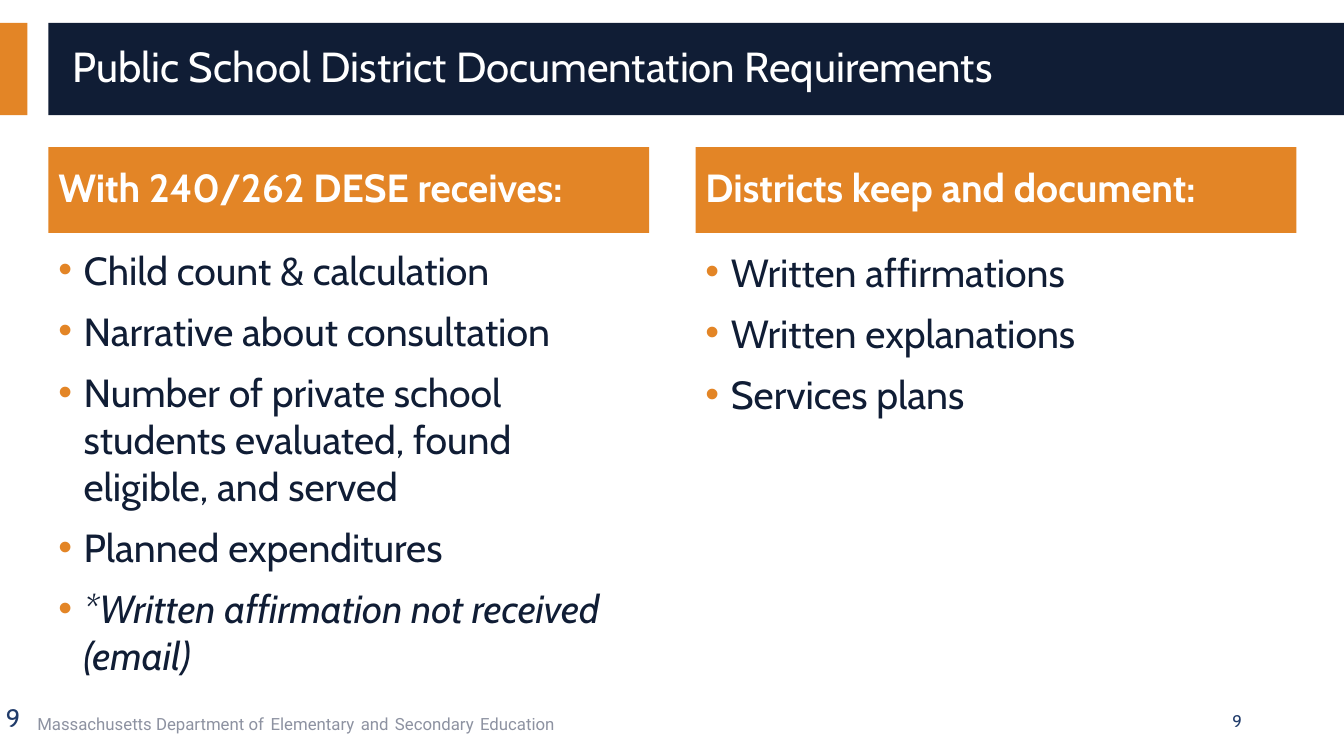
from dataclasses import dataclass

from lxml import etree
from pptx import Presentation
from pptx.dml.color import RGBColor
from pptx.enum.shapes import MSO_SHAPE
from pptx.enum.text import MSO_ANCHOR, MSO_AUTO_SIZE, PP_ALIGN
from pptx.oxml.ns import qn
from pptx.util import Cm, Pt

RECT = MSO_SHAPE.RECTANGLE
TOP, MIDDLE = MSO_ANCHOR.TOP, MSO_ANCHOR.MIDDLE
LEFT, RIGHT = PP_ALIGN.LEFT, PP_ALIGN.RIGHT
NO_FIT = MSO_AUTO_SIZE.NONE


@dataclass(frozen=True)
class Theme:
    navy: str = "101D35"
    orange: str = "E38526"
    white: str = "FFFFFF"
    blue: str = "203B6A"
    grey: str = "8D92A1"
    font: str = "Cabin"
    foot: str = "Roboto"
    title: int = 30
    body: int = 28
    large: int = 18
    small: int = 12
    gap: int = 10


THEME = Theme()
WIDTH, HEIGHT = 33.87, 19.05
MARGIN = 1.22
COLUMN = 15.14
PITCH = 16.31
HEAD = 2.16
INDENT = 0.64

TITLE = "Public School District Documentation Requirements"
LISTS = [
    ("With 240/262 DESE receives:", 0.2, [
        "Child count & calculation",
        "Narrative about consultation",
        "Number of private school students evaluated, found eligible, and served",
        "Planned expenditures",
        "*Written affirmation not received (email)",
    ]),
    ("Districts keep and document:", 0.25, [
        "Written affirmations",
        "Written explanations",
        "Services plans",
    ]),
]
FOOTER = ["Massachusetts Department of", "Elementary", "and", "Secondary", "Education"]
NUMBER = "9"


def style(run, size, color, face=THEME.font, bold=False):
    font = run.font
    font.name, font.size, font.bold = face, Pt(size), bold
    font.color.rgb = RGBColor.from_string(color)


def set_frame(shape, anchor=TOP):
    frame = shape.text_frame
    frame.word_wrap = True
    frame.auto_size = NO_FIT
    frame.vertical_anchor = anchor
    return frame


def add_bar(slide, box, color):
    bar = slide.shapes.add_shape(RECT, *map(Cm, box))
    bar.shadow.inherit = False
    bar.fill.solid()
    bar.fill.fore_color.rgb = RGBColor.from_string(color)
    bar.line.fill.background()
    return bar


def add_text(slide, box, anchor=TOP):
    return set_frame(slide.shapes.add_textbox(*map(Cm, box)), anchor)


def add_line(frame, text, size, color, align=LEFT, bold=False):
    para = frame.paragraphs[0]
    para.text = text
    para.alignment = align
    style(para.runs[0], size, color, bold=bold)
    return para


def add_bullet(para):
    props = para._p.get_or_add_pPr()
    props.set("marL", str(Cm(INDENT)))
    props.set("indent", str(-Cm(INDENT)))
    tint = etree.SubElement(props, qn("a:buClr"))
    etree.SubElement(tint, qn("a:srgbClr"), val=THEME.orange)
    etree.SubElement(props, qn("a:buFont"), typeface="Arial")
    etree.SubElement(props, qn("a:buChar"), char="•")


def add_banner(slide, box):
    left, top, width, height = box
    # Orange tab and navy bar
    add_bar(slide, (left, top, 0.69, height), THEME.orange)
    add_bar(slide, (left + MARGIN, top, width - MARGIN, height), THEME.navy)
    # Title, brought in front of the bar
    title = slide.shapes.title
    title.left, title.top = Cm(left + 1.57), Cm(top + 0.22)
    title.width, title.height = Cm(31.75), Cm(height - 0.43)
    para = add_line(set_frame(title, MIDDLE), TITLE, THEME.title, THEME.white)
    para.line_spacing = 0.9
    slide.shapes._spTree.append(title._element)


def add_column(slide, box, head, gap, items):
    left, top, width, height = box
    # Heading
    bar = add_bar(slide, (left, top, width, HEAD), THEME.orange)
    para = add_line(set_frame(bar, MIDDLE), head, THEME.body, THEME.white, bold=True)
    para.line_spacing = 0.9
    # Bullet list
    start = HEAD + gap
    frame = add_text(slide, (left, top + start, width, height - start))
    frame.text = "\n".join(items)
    for i, para in enumerate(frame.paragraphs):
        para.space_before = Pt(THEME.gap if i else 0)
        add_bullet(para)
        run = para.runs[0]
        style(run, THEME.body, THEME.navy)
        if run.text.startswith("*"):
            run.font.italic = True


def add_footer(slide, box):
    left, top, width, height = box
    # Page number at the left edge
    frame = add_text(slide, (left, top, 1.2, height))
    frame.margin_left = Cm(0.15)
    add_line(frame, NUMBER, THEME.large, THEME.blue)
    # Department name, with wider spaces between its parts
    top += 0.07
    para = add_text(slide, (left + 0.69, top, 21.44, height)).paragraphs[0]
    for i, part in enumerate(FOOTER):
        if i:
            space = para.add_run()
            space.text = " "
            style(space, THEME.large, THEME.blue, THEME.foot)
        word = para.add_run()
        word.text = part
        style(word, THEME.small, THEME.grey, THEME.foot)
    # Page number at the right
    frame = add_text(slide, (left + width - 9.94, top, 7.62, height), MIDDLE)
    add_line(frame, NUMBER, THEME.small, THEME.blue, RIGHT)


def main():
    deck = Presentation()
    deck.slide_width, deck.slide_height = Cm(WIDTH), Cm(HEIGHT)
    slide = deck.slides.add_slide(deck.slide_layouts.get_by_name("Title Only"))
    add_banner(slide, (0, 0.58, WIDTH, 2.32))
    for i, (head, gap, items) in enumerate(LISTS):
        box = (MARGIN + i * PITCH, 3.71, COLUMN, 12.9)
        add_column(slide, box, head, gap, items)
    add_footer(slide, (0, 17.58, WIDTH, 1.02))
    deck.save("out.pptx")


if __name__ == "__main__":
    main()
